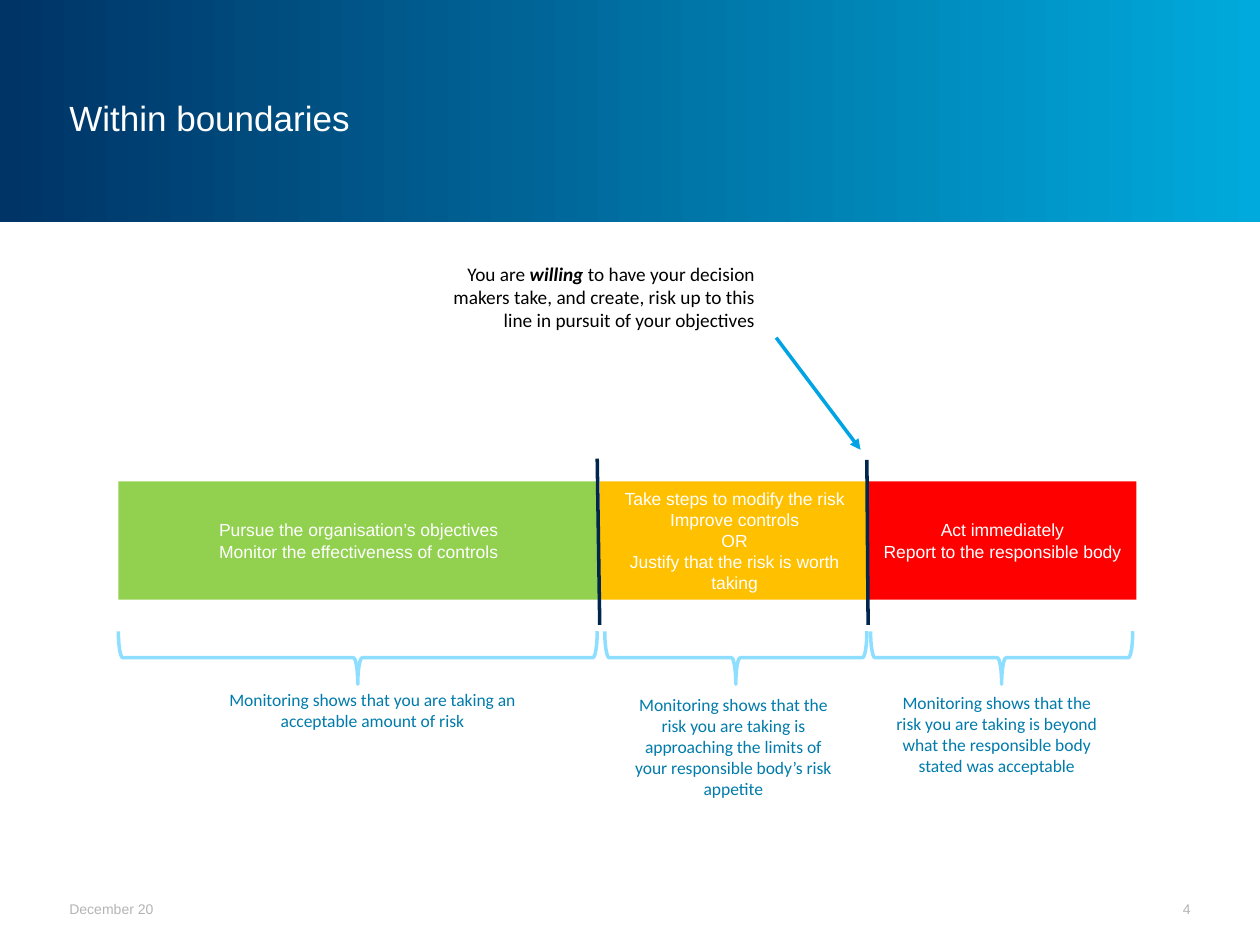
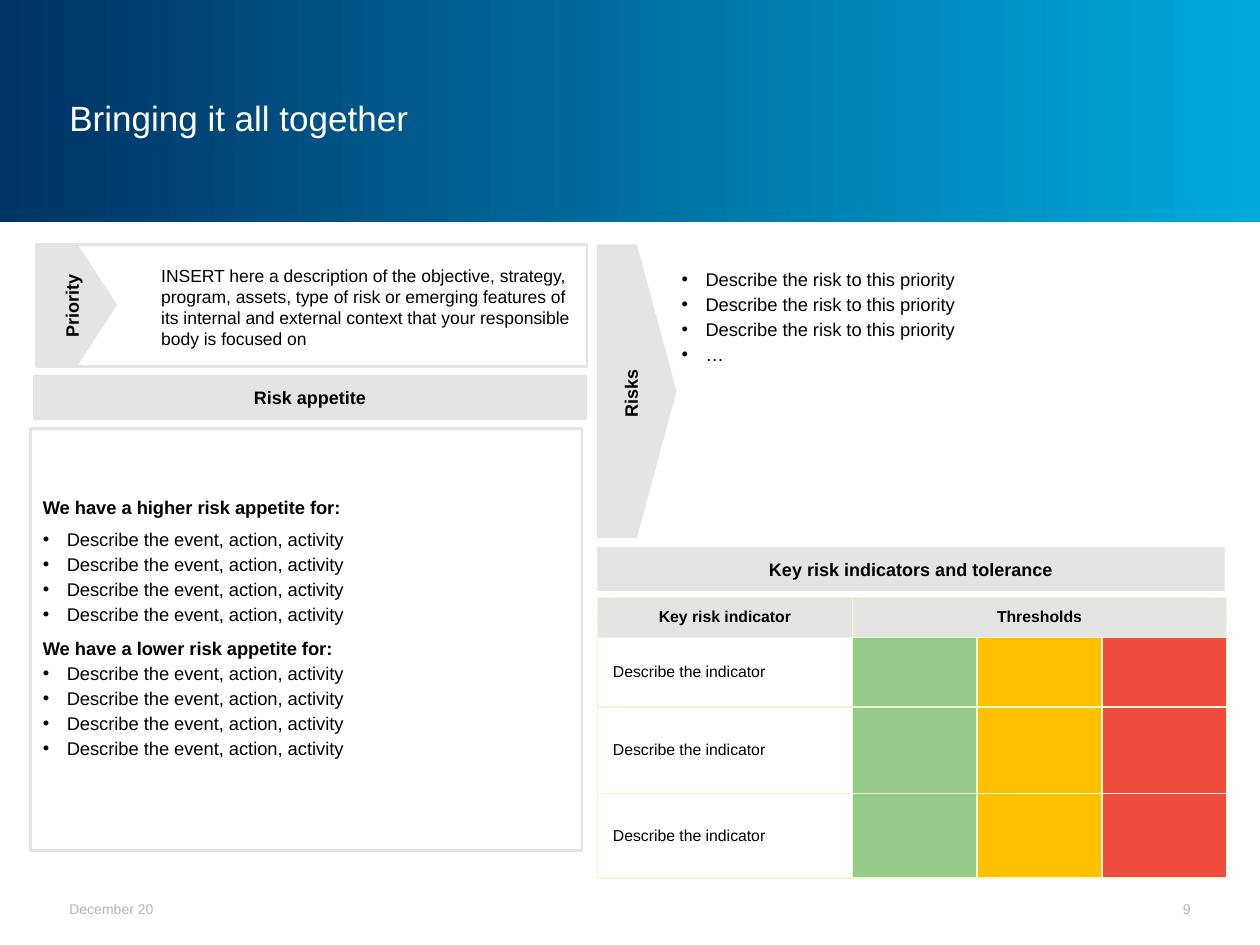
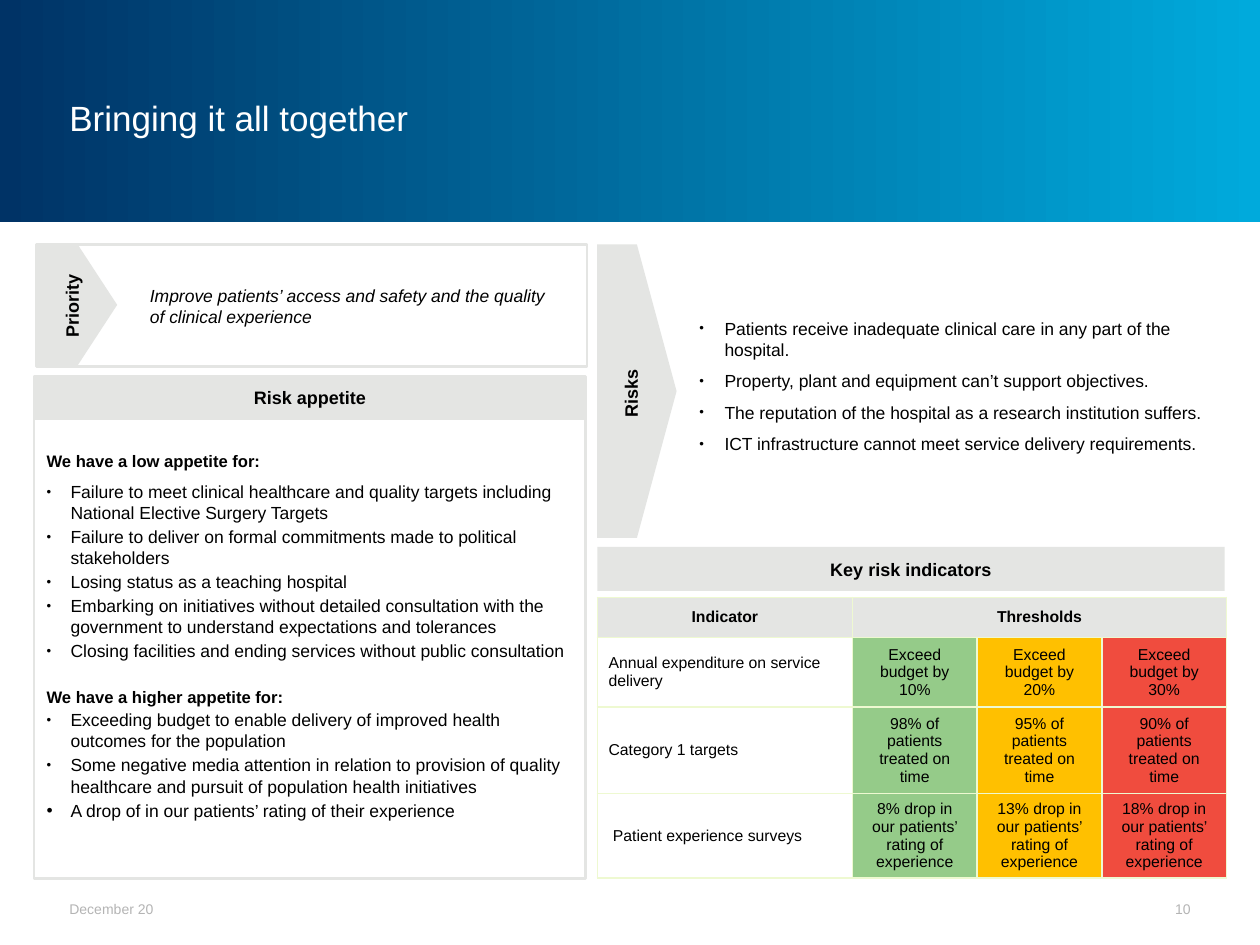
from dataclasses import dataclass, field
from typing import Any, NamedTuple

from lxml import etree
from pptx import Presentation
from pptx import util as u
from pptx.dml.color import RGBColor
from pptx.enum import shapes, text
from pptx.oxml.ns import qn

HEX = {
    "navy": "003366", "sky": "00AADC", "white": "FFFFFF", "black": "000000",
    "mute": "B4B4B4", "grey": "E4E5E3", "rule": "EEF9D1", "ink": "00264D",
    "brace": "8EDFFF", "note": "007BAB", "arrow": "00A4E4",
    "lime": "92D050", "amber": "FFC000", "red": "FF0000",
    "green": "95CB89", "coral": "F04C3E",
}
WIDE, HIGH = u.Inches(10), u.Inches(7.5)
COL, ROW = WIDE / 100, HIGH / 75  # square grid, 100 columns by 75 rows
LEFT, MID, RIGHT = text.PP_ALIGN.LEFT, text.PP_ALIGN.CENTER, text.PP_ALIGN.RIGHT
TOP, CORE = text.MSO_ANCHOR.TOP, text.MSO_ANCHOR.MIDDLE
KIND = shapes.MSO_SHAPE
PAD = (0.1, 0.05, 0.1, 0.05)
SLIM = (0.04,) * 4
NONE = (0,) * 4
FRAME = 1.56


class Box(NamedTuple):
    """Place in grid columns and rows."""
    x: float
    y: float
    w: float
    h: float

    def emu(self) -> tuple[int, ...]:
        return (round(self.x * COL), round(self.y * ROW),
                round(self.w * COL), round(self.h * ROW))


@dataclass
class Para:
    """Text with *strong* parts; dot is the bullet size in percent."""
    text: str
    size: float = 10
    bold: bool = False
    ital: bool = False
    dot: int = 0
    hang: float = 0.19
    before: float = 0
    after: float = 0


@dataclass
class Style:
    color: str = "black"
    align: Any = LEFT
    anchor: Any = CORE
    pad: tuple = PAD
    font: str = "Arial"


class Zone(NamedTuple):
    """One stretch of the risk scale with the note under its brace."""
    x: float
    w: float
    fill: str
    lines: list[str]
    span: tuple[float, float]
    note: str
    place: Box


@dataclass
class Board:
    page: int
    goal: Para
    goal_at: Box
    taste: list[Para]
    taste_at: Box
    taste_pad: tuple
    risks: list[Para]
    risks_at: Box
    head: str
    first: str
    rows: list[list[str]] = field(default_factory=list)


def rgb(name: str) -> RGBColor:
    return RGBColor.from_string(HEX[name])


def apply(obj: Any, **vals: Any) -> None:
    for key, val in vals.items():
        setattr(obj, key, val)


def sub(node: Any, tag: str, **vals: str) -> Any:
    return etree.SubElement(node, qn(tag), vals)


def write(frame: Any, paras: list[Para], style: Style) -> None:
    pad = dict(zip(("margin_left", "margin_top", "margin_right", "margin_bottom"),
                   map(u.Inches, style.pad)))
    apply(frame, word_wrap=True, auto_size=text.MSO_AUTO_SIZE.NONE,
          vertical_anchor=style.anchor, **pad)
    for i, para in enumerate(paras):
        p = frame.paragraphs[0] if i == 0 else frame.add_paragraph()
        props = p._p.get_or_add_pPr()
        hang = u.Inches(para.hang) if para.dot else 0
        props.set("marL", str(hang))
        props.set("indent", str(-hang))
        if para.dot:
            sub(props, "a:buSzPct", val=str(para.dot * 1000))
            sub(props, "a:buFont", typeface="Arial")
            sub(props, "a:buChar", char="•")
        else:
            sub(props, "a:buNone")
        apply(p, alignment=style.align, space_before=u.Pt(para.before),
              space_after=u.Pt(para.after))
        for k, part in enumerate(para.text.split("*")):
            strong = k % 2 == 1
            run = p.add_run()
            run.text = part
            apply(run.font, name=style.font, size=u.Pt(para.size),
                  bold=para.bold or strong, italic=para.ital or strong)
            run.font.color.rgb = rgb(style.color)


def paint(shape: Any, fill: str = "", line: str = "", width: float = FRAME) -> None:
    if fill:
        shape.fill.solid()
        shape.fill.fore_color.rgb = rgb(fill)
    else:
        shape.fill.background()
    if line:
        shape.line.color.rgb = rgb(line)
        shape.line.width = u.Pt(width)
    else:
        shape.line.fill.background()


def block(slide: Any, box: Box, fill: str = "", line: str = "",
          kind: Any = KIND.RECTANGLE, width: float = FRAME) -> Any:
    shape = slide.shapes.add_shape(kind, *box.emu())
    shape.shadow.inherit = False
    paint(shape, fill, line, width)
    return shape


def label(slide: Any, box: Box, paras: list[Para], style: Style) -> Any:
    shape = slide.shapes.add_textbox(*box.emu())
    write(shape.text_frame, paras, style)
    return shape


def hold(shape: Any, box: Box, paras: list[Para], style: Style) -> None:
    """Move a placeholder and fill it."""
    apply(shape, **dict(zip(("left", "top", "width", "height"), box.emu())))
    write(shape.text_frame, paras, style)


def stroke(slide: Any, start: tuple, end: tuple, color: str, tip: bool = False) -> None:
    ends = [round(v * s) for v, s in zip((*start, *end), (COL, ROW) * 2)]
    line = slide.shapes.add_connector(shapes.MSO_CONNECTOR.STRAIGHT, *ends)
    line.line.color.rgb = rgb(color)
    line.line.width = u.Pt(2)
    if tip:
        sub(line.line._get_or_add_ln(), "a:tailEnd", type="triangle")
    sub(line._element.spPr, "a:effectLst")


def wedge(slide: Any, box: Box, word: str, mid: tuple[float, float]) -> None:
    """Block pointing right from half its width, with an upright word."""
    x, y, w, h = box.emu()
    pen = slide.shapes.build_freeform(x, y)
    pen.add_line_segments([(x + w // 2, y), (x + w, y + h // 2),
                           (x + w // 2, y + h), (x, y + h)], close=True)
    shape = pen.convert_to_shape()
    shape.shadow.inherit = False
    paint(shape, "grey")
    size = (11, 2.7)
    spot = Box(mid[0] - size[0] / 2, mid[1] - size[1] / 2, *size)
    label(slide, spot, [Para(word, 10.3, True)], Style(align=MID, pad=NONE)).rotation = 270


def strip(slide: Any, box: Box, word: str, line: str = "") -> None:
    shape = block(slide, box, "grey", line)
    write(shape.text_frame, [Para(word, 10.3, True)], Style(align=MID))


def start(deck: Any, layout: int, title: str, page: int) -> Any:
    slide = deck.slides.add_slide(deck.slide_layouts[layout])
    hold(slide.shapes.title, Box(5.1, 3, 74.8, 12.6), [Para(title, 20)],
         Style("white", pad=SLIM))
    for box, word, align in ((Box(5.1, 70.9, 15.7, 2.4), "December 20", LEFT),
                             (Box(87, 70.9, 7.9, 2.4), str(page), RIGHT)):
        label(slide, box, [Para(word, 8)], Style("mute", align, pad=SLIM))
    return slide


def band(deck: Any, slide: Any) -> None:
    """Put the gradient band on the master, behind every slide."""
    shape = block(slide, Box(0, 0, 100, 17.6), "navy")
    shape.fill.gradient()
    shape.fill.gradient_angle = 0
    for stop, name, spot in zip(shape.fill.gradient_stops, ("navy", "sky"), (0, 1)):
        stop.position = spot
        stop.color.rgb = rgb(name)
    deck.slide_master.shapes._spTree.insert(2, shape._element)


def grid(slide: Any, board: Board) -> None:
    shape = slide.shapes.add_table(len(board.rows) + 1, 4, *Box(47.4, 47.4, 49.8, 22.3).emu())
    table = shape.table
    apply(table, first_row=False, horz_banding=False)
    for col, wide in zip(table.columns, (20.1, 9.9, 9.9, 9.9)):
        col.width = round(wide * COL)
    table.columns[0].width = round(20.25 * COL)
    for row, high in zip(table.rows, (3.2, 5.5, 6.9, 6.7)):
        row.height = round(high * ROW)
    fills = ("white", "green", "amber", "coral")
    for r, words in enumerate([[board.first, "Thresholds", "", ""], *board.rows]):
        for c, fill in enumerate(fills):
            cell = table.cell(r, c)
            props = cell._tc.get_or_add_tcPr()
            for side in ("a:lnL", "a:lnR", "a:lnT", "a:lnB"):
                edge = sub(props, side, w=str(u.Pt(1)))
                sub(sub(edge, "a:solidFill"), "a:srgbClr", val=HEX["rule"])
            cell.fill.solid()
            cell.fill.fore_color.rgb = rgb("grey" if r == 0 else fill)
            apply(cell, vertical_anchor=CORE, margin_left=u.Inches(0.09),
                  margin_right=u.Inches(0.09), margin_top=u.Inches(0.04),
                  margin_bottom=u.Inches(0.04))
            if words[c]:
                para = cell.text_frame.paragraphs[0]
                para.alignment = MID if r == 0 or c else LEFT
                run = para.add_run()
                run.text = words[c]
                apply(run.font, name="Arial", size=u.Pt(9), bold=r == 0)
                run.font.color.rgb = rgb("black")
    table.cell(0, 1).merge(table.cell(0, 3))


def scale(slide: Any, zones: list[Zone]) -> None:
    for zone in zones:
        bar = block(slide, Box(zone.x, 38.2, zone.w, 9.4), zone.fill)
        write(bar.text_frame, [Para(line) for line in zone.lines], Style("white", MID))
        left, span = zone.span
        deep = 4.2
        brace = block(slide, Box(left + (span - deep) / 2, 52.2 - span / 2, deep, span),
                      line="brace", kind=KIND.LEFT_BRACE, width=2)
        brace.rotation = 270
        label(slide, zone.place, [Para(zone.note)],
              Style("note", MID, TOP, font="Calibri"))
    for x, y, end in ((47.4, 36.4, 47.6), (68.8, 36.5, 68.9)):
        stroke(slide, (x, y), (end, 49.6), "ink")
    label(slide, Box(35, 20.3, 25.9, 6.6),
          [Para("You are *willing* to have your decision makers take, and create, "
                "risk up to this line in pursuit of your objectives", 11)],
          Style("black", RIGHT, TOP, font="Calibri"))
    stroke(slide, (61.6, 26.8), (68.3, 35.7), "arrow", True)


def fill_board(deck: Any, board: Board) -> None:
    slide = start(deck, 3, "Bringing it all together", board.page)
    taste, risks = list(slide.placeholders)[1:3]
    paint(taste, "white", "grey")
    hold(taste, board.taste_at, board.taste, Style(pad=board.taste_pad))
    hold(risks, board.risks_at, board.risks, Style(anchor=TOP, pad=(0, 0.03, 0, 0)))
    block(slide, Box(2.9, 19.4, 43.7, 9.7), line="grey")
    label(slide, board.goal_at, [board.goal], Style(pad=NONE))
    wedge(slide, Box(47.4, 19.4, 6.3, 23.3), "Risks", (50.05, 31.25))
    wedge(slide, Box(2.9, 19.3, 6.4, 9.8), "Priority", (5.7, 24.25))
    strip(slide, Box(47.4, 43.4, 49.8, 3.5), board.head)
    strip(slide, Box(2.7, 29.9, 43.8, 3.3), "Risk appetite", "grey")
    grid(slide, board)


def items(lines: list[str], **vals: Any) -> list[Para]:
    return [Para(line, **vals) for line in lines]


ZONES = [
    Zone(9.4, 38.1, "lime",
         ["Pursue the organisation’s objectives", "Monitor the effectiveness of controls"],
         (9.4, 38), "Monitoring shows that you are taking an acceptable amount of risk",
         Box(14.5, 54.2, 30.1, 4.4)),
    Zone(47.6, 21.4, "amber",
         ["Take steps to modify the risk", "Improve controls", "OR",
          "Justify that the risk is worth taking"],
         (48, 20.8), "Monitoring shows that the risk you are taking is approaching "
         "the limits of your responsible body’s risk appetite",
         Box(49.2, 54.6, 18, 9.4)),
    Zone(68.9, 21.3, "red", ["Act immediately", "Report to the responsible body"],
         (69.1, 20.8), "Monitoring shows that the risk you are taking is beyond "
         "what the responsible body stated was acceptable",
         Box(69.9, 54.4, 18.4, 7.7)),
]
DOTS = {"size": 10.5, "dot": 100, "after": 1.7}
SMALL = {"size": 10, "dot": 75, "after": 1.7}
EVENTS = ["Describe the event, action, activity"] * 4
BLANK = Board(
    9,
    Para("INSERT here a description of the objective, strategy, program, assets, type of "
         "risk or emerging features of its internal and external context that your "
         "responsible body is focused on"),
    Box(12.8, 21, 33, 6.7),
    [Para("We have a higher risk appetite for:", 10.5, True, after=6),
     *items(EVENTS, **DOTS),
     Para("We have a lower risk appetite for:", 10.5, True, before=5.1, after=1.7),
     *items(EVENTS, **DOTS)],
    Box(2.4, 34, 43.8, 33.5), (0.1, 0.05, 0.1, 0.24),
    items(["Describe the risk to this priority"] * 3 + ["…"], **DOTS),
    Box(54.1, 21, 42.7, 8.3),
    "Key risk indicators and tolerance", "Key risk indicator",
    [[" Describe the indicator", "", "", ""]] * 3)
CASE = Board(
    10,
    Para("Improve patients’ access and safety and the quality of clinical experience",
         ital=True),
    Box(11.9, 22.6, 32, 3.4),
    [Para("We have a low appetite for:", 9.5, True, after=6),
     *items(["Failure to meet clinical healthcare and quality targets including "
             "National Elective Surgery Targets",
             "Failure to deliver on formal commitments made to political stakeholders",
             "Losing status as a teaching hospital",
             "Embarking on initiatives without detailed consultation with the "
             "government to understand expectations and tolerances",
             "Closing facilities and ending services without public consultation"],
            **SMALL),
     Para("We have a higher appetite for:", 9.5, True, before=12.6, after=1.7),
     *items(["Exceeding budget to enable delivery of improved health outcomes "
             "for the population",
             "Some negative media attention in relation to provision of quality "
             "healthcare and pursuit of population health initiatives"], **SMALL),
     Para("A drop of in our patients’ rating of their experience", dot=100, after=1.7)],
    Box(2.7, 31.2, 43.8, 38.5), PAD,
    items(["Patients receive inadequate clinical care in any part of the hospital.",
           "Property, plant and equipment can’t support objectives.",
           "The reputation of the hospital as a research institution suffers.",
           "ICT infrastructure cannot meet service delivery requirements."],
          dot=75, hang=0.2, after=6),
    Box(55.5, 24.9, 42.7, 11.3),
    "Key risk indicators", "Indicator",
    [["Annual expenditure on service delivery",
      *(f"Exceed budget by {n}%" for n in (10, 20, 30))],
     ["Category 1 targets", *(f"{n}% of patients treated on time" for n in (98, 95, 90))],
     [" Patient experience surveys",
      *(f"{n}% drop in our patients’ rating of experience" for n in (8, 13, 18))]])


def main() -> None:
    deck = Presentation()
    apply(deck, slide_width=WIDE, slide_height=HIGH)
    slide = start(deck, 5, "Within boundaries", 4)
    band(deck, slide)
    scale(slide, ZONES)
    for board in (BLANK, CASE):
        fill_board(deck, board)
    deck.save("out.pptx")


if __name__ == "__main__":
    main()
